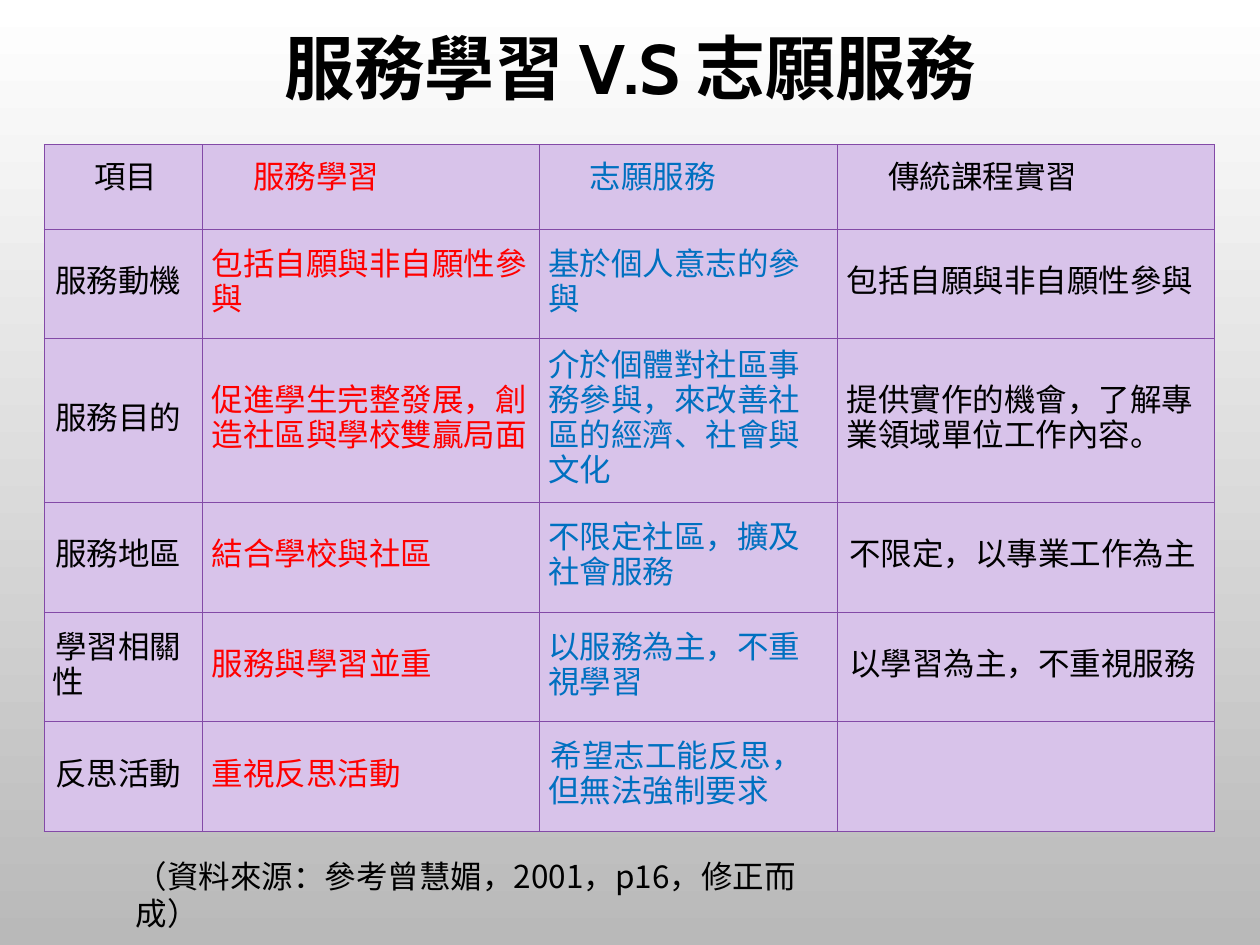
from lxml.etree import SubElement
from pptx import Presentation
from pptx.dml.color import RGBColor
from pptx.enum.text import MSO_ANCHOR, MSO_AUTO_SIZE, PP_ALIGN
from pptx.oxml.ns import qn
from pptx.util import Inches, Pt

BLACK = RGBColor(0x00, 0x00, 0x00)
WHITE = RGBColor(0xFF, 0xFF, 0xFF)
GREY = RGBColor(0xB9, 0xB9, 0xB9)
RED = RGBColor(0xFF, 0x00, 0x00)
BLUE = RGBColor(0x00, 0x70, 0xC0)
LILAC = RGBColor(0xD8, 0xC3, 0xEA)
PURPLE = RGBColor(0x83, 0x4A, 0xA7)

INKS = [BLACK, RED, BLUE, BLACK]
WIDTHS = [1.26, 2.67, 2.37, 2.99]
HEIGHTS = [0.67, 0.87, 1.3, 0.87, 0.87, 0.87]
ROWS = [
    ["項目", "服務學習", "志願服務", "傳統課程實習"],
    ["服務動機", "包括自願與非自願性參與", "基於個人意志的參與", "包括自願與非自願性參與"],
    ["服務目的", "促進學生完整發展，創造社區與學校雙贏局面",
     "介於個體對社區事務參與，來改善社區的經濟、社會與文化",
     "提供實作的機會，了解專業領域單位工作內容。"],
    ["服務地區", "結合學校與社區", "不限定社區，擴及社會服務", "不限定，以專業工作為主"],
    ["學習相關性", "服務與學習並重", "以服務為主，不重視學習", "以學習為主，不重視服務"],
    ["反思活動", "重視反思活動", "希望志工能反思，但無法強制要求", ""],
]
NUDGED = {(3, 3), (4, 3), (5, 2)}


class Deck:
    """Holds the style and the current slide, and adds each kind of element."""

    def __init__(self):
        self.show = Presentation()
        self.show.slide_width, self.show.slide_height = Inches(10), Inches(7.5)
        self.slide = self.show.slides.add_slide(self.show.slide_layouts[5])
        self.face, self.size = "Cabin", 18

    def shade(self, top, base):
        fill = self.slide.background.fill
        fill.gradient()
        fill.gradient_angle = 270
        for stop, place, ink in zip(fill.gradient_stops, (0, 1), (top, base)):
            stop.position, stop.color.rgb = place, ink

    def style(self, para, ink=BLACK, size=None, face=None, bold=False):
        font = para.font
        font.name, font.size = face or self.face, Pt(size or self.size)
        font.color.rgb, font.bold = ink, bold

    def title(self, text, left, top, width, height):
        box = self.slide.shapes.title
        box.left, box.top = Inches(left), Inches(top)
        box.width, box.height = Inches(width), Inches(height)
        box.text_frame.vertical_anchor = MSO_ANCHOR.MIDDLE
        para = box.text_frame.paragraphs[0]
        para.text, para.alignment, para.line_spacing = text, PP_ALIGN.CENTER, 0.9
        self.style(para, size=40, bold=True)

    def note(self, text, left, top, width, height, face):
        box = self.slide.shapes.add_textbox(
            Inches(left), Inches(top), Inches(width), Inches(height))
        frame = box.text_frame
        frame.word_wrap, frame.auto_size = True, MSO_AUTO_SIZE.SHAPE_TO_FIT_TEXT
        para = frame.paragraphs[0]
        para.text = text
        self.style(para, face=face)

    def border(self, cell, ink, width):
        props = cell._tc.get_or_add_tcPr()
        for side in "LRTB":
            line = SubElement(props, qn(f"a:ln{side}"), w=str(Pt(width)))
            fill = SubElement(line, qn("a:solidFill"))
            SubElement(fill, qn("a:srgbClr"), val=str(ink))

    def cell(self, cell, text, ink, indent, pitch):
        self.border(cell, PURPLE, 0.75)
        cell.fill.solid()
        cell.fill.fore_color.rgb = LILAC
        cell.vertical_anchor = MSO_ANCHOR.MIDDLE
        cell.margin_left = cell.margin_right = Inches(0.07)
        cell.margin_top = cell.margin_bottom = 0
        para = cell.text_frame.paragraphs[0]
        para.text, para.line_spacing = text, Pt(pitch)
        props = para._p.get_or_add_pPr()
        props.set("marL", "0")
        props.set("indent", str(Inches(indent)))
        self.style(para, ink)

    def table(self, rows, left, top, widths, heights):
        grid = self.slide.shapes.add_table(
            len(rows), len(widths), Inches(left), Inches(top),
            Inches(sum(widths)), Inches(sum(heights))).table
        grid.first_row = grid.horz_banding = False
        for col, width in zip(grid.columns, widths):
            col.width = Inches(width)
        for r, (row, height) in enumerate(zip(rows, heights)):
            grid.rows[r].height = Inches(height)
            for c, text in enumerate(row):
                nudge = 0.02 if c == 0 or (r, c) in NUDGED else 0
                indent, pitch = (nudge, 20) if r else (0.33, 12)
                self.cell(grid.cell(r, c), text, INKS[c], indent, pitch)


def main():
    deck = Deck()
    deck.shade(WHITE, GREY)
    deck.title("服務學習 V.S 志願服務", 0.75, 0.13, 8.5, 0.88)
    deck.table(ROWS, 0.35, 1.15, WIDTHS, HEIGHTS)
    deck.note("（資料來源：參考曾慧媚，2001，p16，修正而成）",
              0.98, 6.75, 5.75, 0.4, "Noto Sans CJK SC")
    deck.show.save("out.pptx")


if __name__ == "__main__":
    main()
